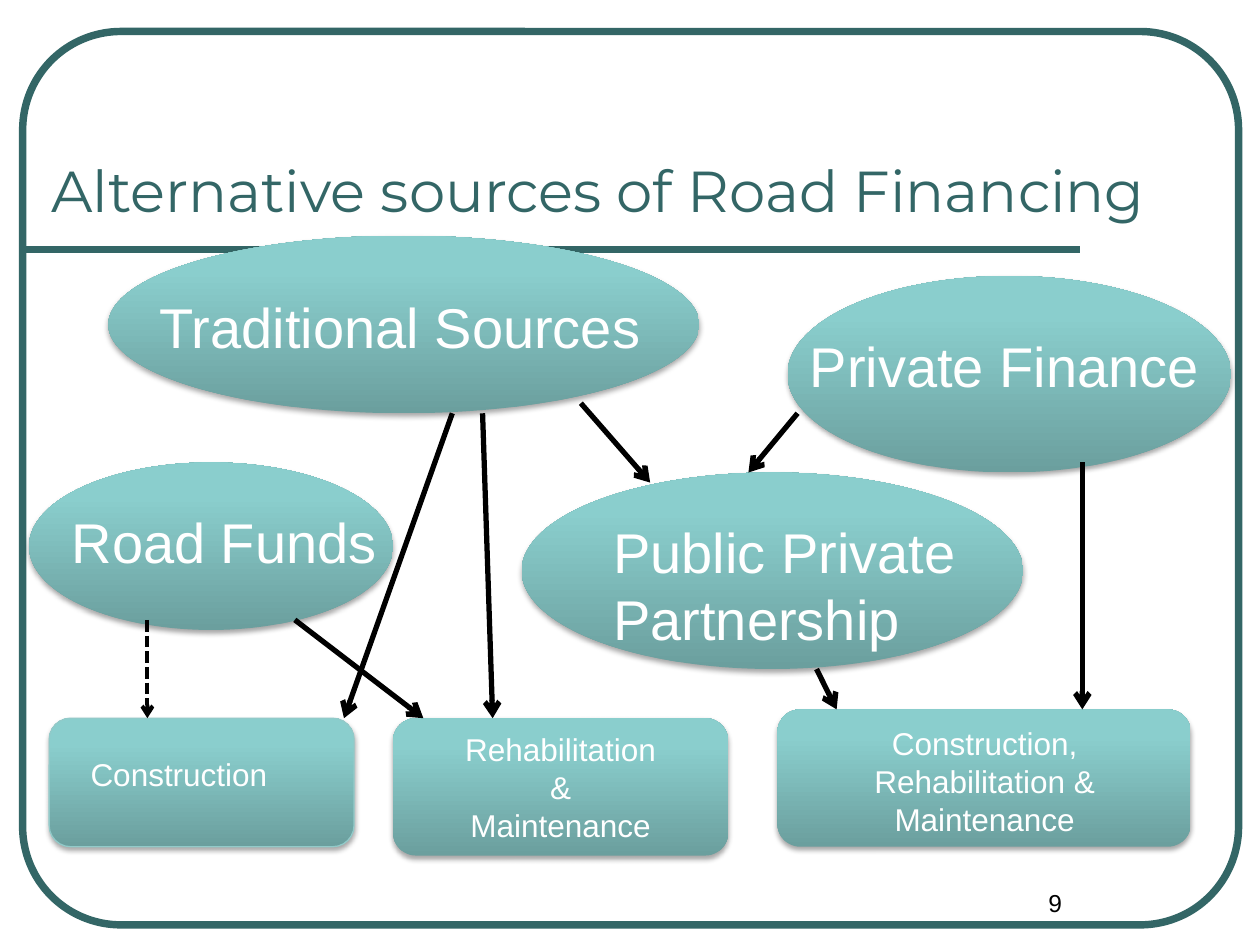
from lxml import etree
from pptx import Presentation
from pptx import util as u
from pptx.dml.color import RGBColor
from pptx.enum import dml, shapes, text
from pptx.oxml.ns import qn

PX = 9144  # EMU per px, 100 px to the inch
COLORS = {"frame": "336666", "edge": "92CAC9", "white": "FFFFFF", "black": "000000",
          "low": "6B9F9E", "mid": "8ACECD", "high": "8AD1CF"}
GRADIENT = [(0, "low"), (80, "mid"), (100, "high")]
ROUNDED, OVAL = shapes.MSO_SHAPE.ROUNDED_RECTANGLE, shapes.MSO_SHAPE.OVAL
CENTER = text.PP_ALIGN.CENTER


def rgb(name):
    return RGBColor.from_string(COLORS[name])


def add_xml(parent, tag, **attrs):
    return etree.SubElement(parent, qn(tag), {k: str(v) for k, v in attrs.items()})


class Diagram:
    def __init__(self, slide, font="Arial"):
        self.s = slide
        self.font = font

    def fill_text(self, shape, lines, size, color="white", align=None, font=None,
                  anchor=text.MSO_ANCHOR.TOP):
        tf = shape.text_frame
        tf.word_wrap = True
        tf.vertical_anchor = anchor
        tf.text = lines
        for p in tf.paragraphs:
            p.alignment = align
            for r in p.runs:
                r.font.size = u.Pt(size)
                r.font.name = font or self.font
                r.font.color.rgb = rgb(color)

    def label(self, box, lines, size, **style):
        tb = self.s.shapes.add_textbox(*(v * PX for v in box))
        self.fill_text(tb, lines, size, **style)

    def frame(self, box):
        sp = self.s.shapes.add_shape(ROUNDED, *(v * PX for v in box))
        sp.adjustments[0] = 0.11
        sp.shadow.inherit = False
        sp.fill.background()
        sp.line.color.rgb = rgb("frame")
        sp.line.width = u.Pt(4.25)

    def node(self, kind, box, edge=None):
        """Add a shape with the vertical gradient and soft shadow."""
        sp = self.s.shapes.add_shape(kind, *(v * PX for v in box))
        sp.fill.gradient()
        sp.fill.gradient_angle = 90
        stops = sp._element.spPr.find(".//" + qn("a:gsLst"))
        for old in list(stops):
            stops.remove(old)
        for pos, color in GRADIENT:
            stop = add_xml(stops, "a:gs", pos=pos * 1000)
            add_xml(stop, "a:srgbClr", val=COLORS[color])
        if edge:
            sp.line.color.rgb = rgb(edge)
            sp.line.width = u.Pt(0.75)
        else:
            sp.line.fill.background()
        sp.shadow.inherit = False
        effects = sp._element.spPr.find(qn("a:effectLst"))
        shadow = add_xml(effects, "a:outerShdw", blurRad=u.Pt(3.1), dist=u.Pt(1.8),
                         dir=5400000, rotWithShape=0)
        add_xml(add_xml(shadow, "a:srgbClr", val=COLORS["black"]), "a:alpha", val=35000)
        return sp

    def line(self, ends, color="black", width=3, dash=None, arrow=True):
        c = self.s.shapes.add_connector(shapes.MSO_CONNECTOR.STRAIGHT,
                                        *(v * PX for v in ends))
        c.line.color.rgb = rgb(color)
        c.line.width = u.Pt(width)
        if dash:
            c.line.dash_style = dash
        if arrow:
            add_xml(c._element.spPr.find(qn("a:ln")), "a:tailEnd", type="arrow")
        add_xml(c._element.spPr, "a:effectLst")


def main():
    prs = Presentation()
    prs.slide_width, prs.slide_height = 1000 * PX, 750 * PX
    d = Diagram(prs.slides.add_slide(prs.slide_layouts[6]))

    d.frame((18, 25, 965, 709))
    d.line((16, 198, 857, 198), color="frame", width=4.5, arrow=False)
    d.label((31, 58, 945, 125), "Alternative sources of Road Financing", 33,
            color="frame", font="Montserrat", anchor=text.MSO_ANCHOR.BOTTOM)

    d.node(ROUNDED, (39, 570, 242, 102), edge="edge")
    d.node(ROUNDED, (617, 563, 328, 109))
    rehabilitation = d.node(ROUNDED, (312, 570, 266, 109))
    d.fill_text(rehabilitation, "Rehabilitation\n&\nMaintenance", 18, align=CENTER,
                anchor=text.MSO_ANCHOR.MIDDLE)

    for box in [(86, 187, 469, 141), (23, 367, 289, 133),
                (414, 375, 398, 156), (625, 219, 352, 156)]:
        d.node(OVAL, box)

    for box, words in [((633, 258, 344, 64), "Private Finance"),
                       ((117, 227, 422, 64), "Traditional Sources"),
                       ((47, 398, 281, 64), "Road Funds"),
                       ((477, 406, 383, 118), "Public Private Partnership")]:
        d.label(box, words, 32)
    d.label((62, 594, 195, 40), "Construction", 18)

    for ends in [(359, 328, 273, 570), (383, 328, 391, 570), (461, 320, 516, 383),
                 (633, 328, 594, 375), (859, 367, 859, 563), (648, 531, 664, 563),
                 (234, 492, 336, 570)]:
        d.line(ends)
    d.line((117, 492, 117, 570), width=2.25, dash=dml.MSO_LINE.SQUARE_DOT)

    d.label((641, 570, 281, 101), "Construction,\nRehabilitation & Maintenance", 18,
            align=CENTER)
    d.label((750, 700, 175, 50), "9", 14, color="black", align=CENTER)

    prs.save("out.pptx")


if __name__ == "__main__":
    main()
